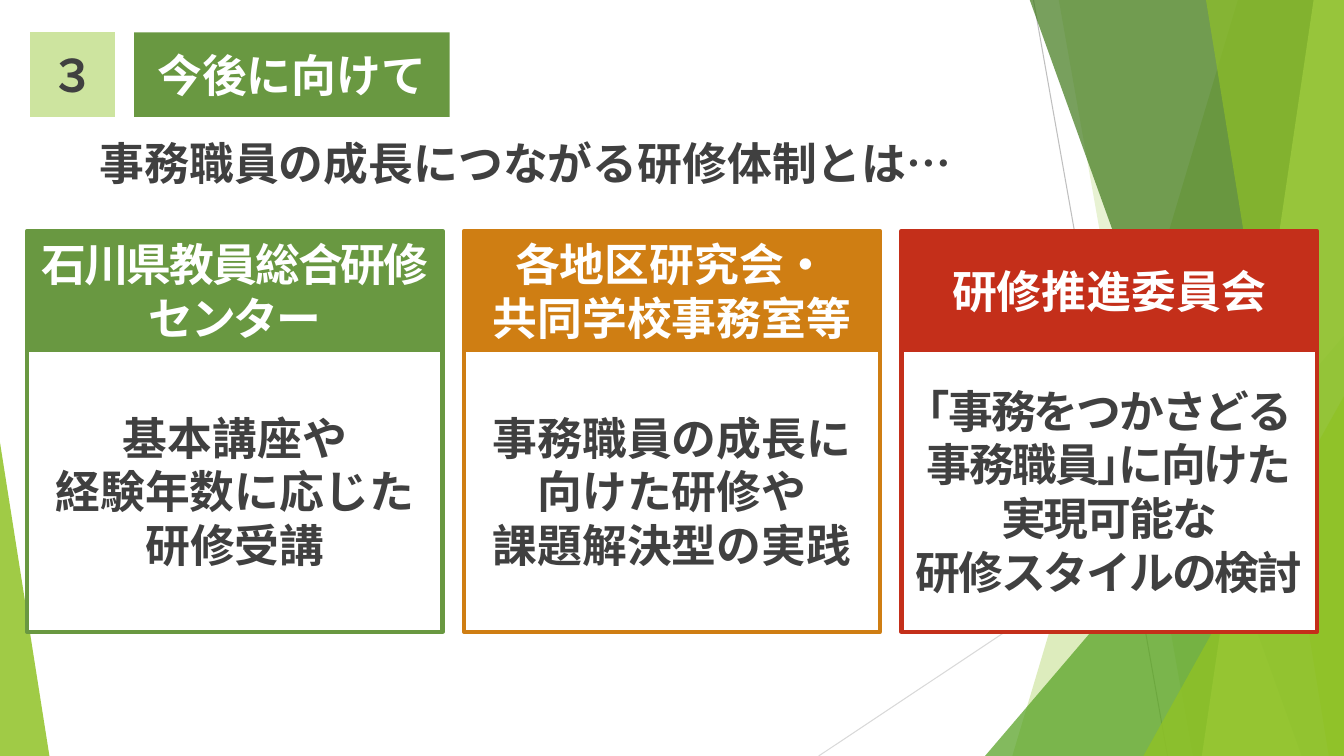
"""Build the slide on the future training system for school office staff."""
from lxml.etree import SubElement
from pptx import Presentation
from pptx.dml.color import RGBColor
from pptx.enum.shapes import MSO_CONNECTOR, MSO_SHAPE
from pptx.enum.text import MSO_ANCHOR, MSO_AUTO_SIZE, PP_ALIGN
from pptx.oxml.ns import qn
from pptx.util import Inches, Pt

FONT = "Noto Sans CJK JP"
COLORS = {
    "white": "FFFFFF", "text": "404040", "number": "CDE49F",
    "green": "699841", "orange": "CF7E13", "red": "C42F1A",
    "leaf": "90C226", "mid": "54A021", "deep": "3F7819", "pale": "C0E474",
    "line_dark": "BFBFBF", "line_light": "D9D9D9",
}
BACKDROP = [
    ("free", (12.28, 13.33, 10.04), "leaf", 30),
    ("free", (10.5, 13.33, 11.83), "leaf", 20),
    ("triangle", (9.77, 3.33, 3.56, 4.17, 1), "mid", 72),
    ("free", (10.21, 13.33, 12.91), "deep", 70),
    ("free", (13.03, 13.33, 11.92), "pale", 70),
    ("free", (11.96, 13.33, 13.18), "leaf", 65),
    ("triangle", (11.34, 3.93, 1.99, 3.57, 1), "leaf", 80),
    ("triangle", (0, 4.39, 0.49, 3.11, 0), "leaf", 85),
]
CARDS = [
    ("green", ["石川県教員総合研修", "センター"], -1.5,
     ["基本講座や", "経験年数に応じた研修受講"], 0),
    ("orange", ["各地区研究会・", "共同学校事務室等"], 0,
     ["事務職員の成長に", "向けた研修や", "課題解決型の実践"], 0),
    ("red", ["研修推進委員会"], 0,
     ["｢事務をつかさどる事務職員｣に向けた", "実現可能な", "研修スタイルの検討"], -1.5),
]
CARD_LEFT, CARD_STEP, CARD_WIDTH = 0.27, 4.335, 4.12


def rgb(name):
    """Return the named colour."""
    return RGBColor.from_string(COLORS[name])


def paint(sp, fill, line=None, alpha=None):
    """Set the fill, outline and opacity of a shape."""
    sp.fill.solid()
    sp.fill.fore_color.rgb = rgb(fill)
    if alpha is not None:
        clr = sp.fill._xPr.find(qn("a:solidFill"))[0]
        SubElement(clr, qn("a:alpha")).set("val", str(alpha * 1000))
    if line:
        sp.line.color.rgb = rgb(line)
        sp.line.width = Pt(3)
    else:
        sp.line.fill.background()


def write(sp, lines, color, align=PP_ALIGN.CENTER, anchor=MSO_ANCHOR.MIDDLE, spacing=0):
    """Write bold paragraphs into a shape."""
    tf = sp.text_frame
    frame = {"word_wrap": True, "auto_size": MSO_AUTO_SIZE.NONE, "vertical_anchor": anchor}
    for name, value in frame.items():
        setattr(tf, name, value)
    for i, line in enumerate(lines):
        p = tf.add_paragraph() if i else tf.paragraphs[0]
        p.alignment = align
        r = p.add_run()
        r.text = line
        for name, value in {"size": Pt(32), "bold": True, "name": FONT}.items():
            setattr(r.font, name, value)
        r.font.color.rgb = rgb(color)
        rpr = r._r.get_or_add_rPr()
        SubElement(rpr, qn("a:ea")).set("typeface", FONT)
        if spacing:
            rpr.set("spc", str(int(spacing * 100)))


def add_line(s, start, end, color):
    """Draw a thin backdrop line."""
    sp = s.shapes.add_connector(MSO_CONNECTOR.STRAIGHT, *map(Inches, start + end))
    sp.line.color.rgb = rgb(color)
    sp.line.width = Pt(0.75)
    SubElement(sp._element.spPr, qn("a:effectLst"))


def add_facet(s, kind, geometry, color, alpha):
    """Draw one translucent facet of the backdrop."""
    if kind == "free":
        top_left, right, bottom_left = map(Inches, geometry)
        top, bottom = Inches(-0.01), Inches(7.5)
        fb = s.shapes.build_freeform(top_left, top)
        fb.add_line_segments([(right, top), (right, bottom), (bottom_left, bottom)])
        sp = fb.convert_to_shape()
    else:
        *box, apex = geometry
        sp = s.shapes.add_shape(MSO_SHAPE.ISOSCELES_TRIANGLE, *map(Inches, box))
        sp.adjustments[0] = apex
    sp.shadow.inherit = False
    paint(sp, color, alpha=alpha)


def add_box(s, box, lines, fill, color, line=None, spacing=0):
    """Draw a rectangle with centred text."""
    sp = s.shapes.add_shape(MSO_SHAPE.RECTANGLE, *map(Inches, box))
    sp.shadow.inherit = False
    paint(sp, fill, line)
    write(sp, lines, color, spacing=spacing)


def place_title(s, box, text):
    """Move, fill and write the title placeholder."""
    sp = s.shapes.title
    sp.left, sp.top, sp.width, sp.height = map(Inches, box)
    paint(sp, "green")
    write(sp, [text], "white")


def add_card(s, index, color, head, head_spacing, body, body_spacing):
    """Draw a heading box with its body box below."""
    left = CARD_LEFT + index * CARD_STEP
    add_box(s, (left, 2.29, CARD_WIDTH, 1.18), head, color, "white", color, head_spacing)
    add_box(s, (left, 3.47, CARD_WIDTH, 2.8), body, "white", "text", color, body_spacing)


def main():
    """Build and save the slide."""
    prs = Presentation()
    prs.slide_width, prs.slide_height = Inches(13.33), Inches(7.5)
    s = prs.slides.add_slide(prs.slide_layouts[5])
    add_line(s, (10.25, 0), (11.58, 7.5), "line_dark")
    add_line(s, (13.33, 4.03), (8.12, 7.5), "line_light")
    for facet in BACKDROP:
        add_facet(s, *facet)
    add_box(s, (0.3, 0.32, 0.84, 0.84), ["３"], "number", "text")
    place_title(s, (1.33, 0.32, 3.13, 0.84), "今後に向けて")
    lead = s.shapes.add_textbox(*map(Inches, (0.89, 1.3, 9.05, 0.64)))
    write(lead, ["事務職員の成長につながる研修体制とは…"], "text", PP_ALIGN.LEFT, MSO_ANCHOR.TOP)
    for index, card in enumerate(CARDS):
        add_card(s, index, *card)
    prs.save("out.pptx")


if __name__ == "__main__":
    main()
